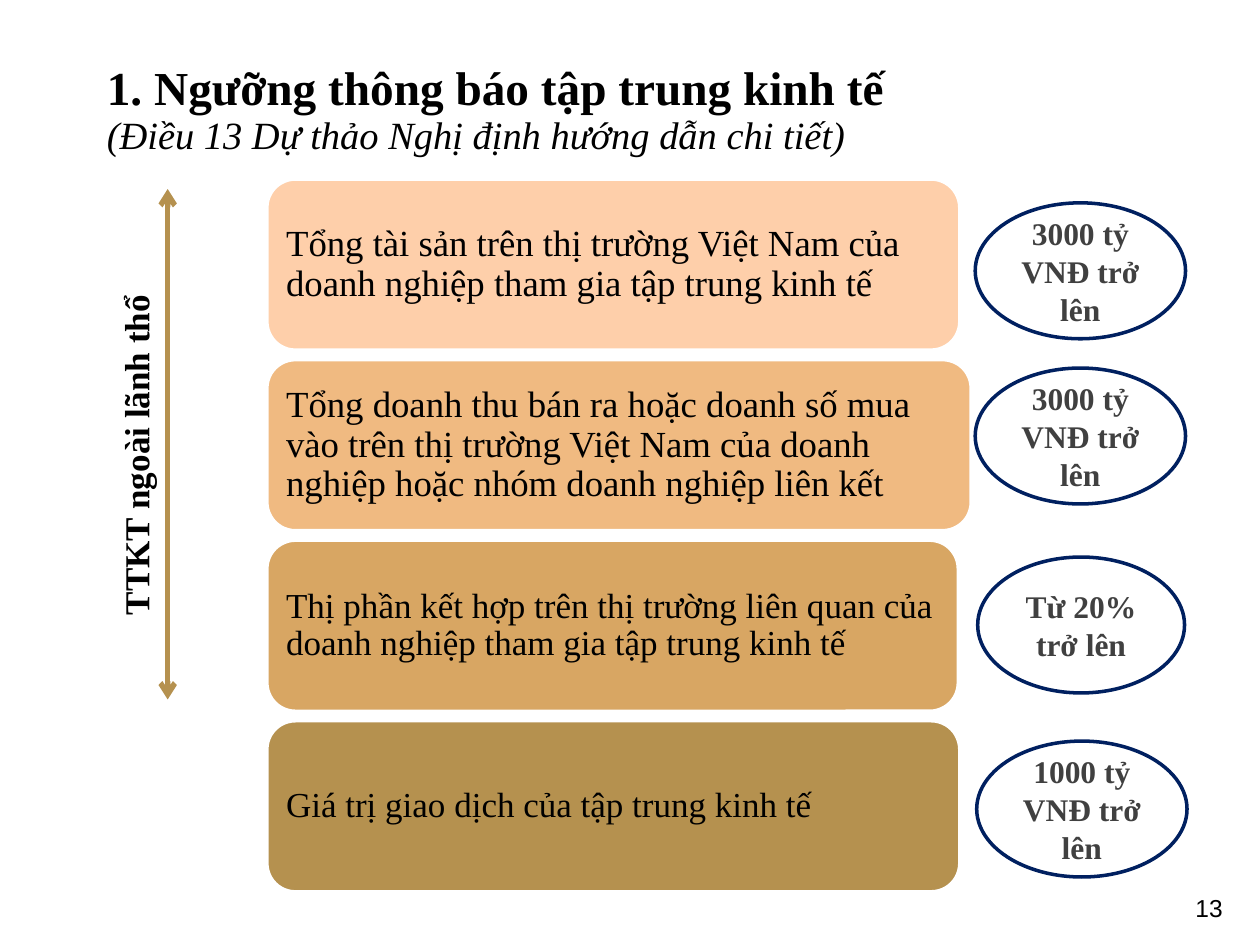
from dataclasses import dataclass

from lxml import etree
from pptx import Presentation
from pptx.dml.color import RGBColor
from pptx.enum.shapes import MSO_CONNECTOR, MSO_SHAPE
from pptx.enum.text import MSO_ANCHOR, MSO_AUTO_SIZE, PP_ALIGN
from pptx.oxml.ns import qn
from pptx.util import Cm, Pt

LEFT, CENTER, RIGHT = PP_ALIGN.LEFT, PP_ALIGN.CENTER, PP_ALIGN.RIGHT
TOP, MIDDLE = MSO_ANCHOR.TOP, MSO_ANCHOR.MIDDLE
ROUNDED, OVAL = MSO_SHAPE.ROUNDED_RECTANGLE, MSO_SHAPE.OVAL
TITLE_ONLY = 5


@dataclass(frozen=True)
class Theme:
    font: str = "Times New Roman"
    number_font: str = "Arial"
    text: str = "000000"
    badge_text: str = "404040"
    badge_line: str = "002060"
    card_line: str = "FFFFFF"
    arrow: str = "B5914F"
    title_size: float = 27
    subtitle_size: float = 22
    label_size: float = 20
    badge_size: float = 18
    number_size: float = 14


THEME = Theme()

# Card text, text size, fill, card width; threshold, its left, top and width (cm)
CRITERIA = [
    ("Tổng tài sản trên thị trường Việt Nam của doanh nghiệp tham gia tập trung kinh tế",
     21, "FECFAA", 13.97, "3000 tỷ VNĐ trở lên", 19.66, 4.09, 4.24),
    ("Tổng doanh thu bán ra hoặc doanh số mua vào trên thị trường Việt Nam của doanh nghiệp "
     "hoặc nhóm doanh nghiệp liên kết",
     21, "F0BA81", 14.2, "3000 tỷ VNĐ trở lên", 19.66, 7.42, 4.24),
    ("Thị phần kết hợp trên thị trường liên quan của doanh nghiệp tham gia tập trung kinh tế",
     20, "D8A663", 13.94, "Từ 20% trở lên", 19.71, 11.23, 4.17),
    ("Giá trị giao dịch của tập trung kinh tế",
     20, "B5914F", 13.97, "1000 tỷ VNĐ trở lên", 19.69, 14.94, 4.24),
]
CARD_HEIGHT, CARD_PITCH, BADGE_HEIGHT = 3.45, 3.64, 2.74


def rgb(value):
    return RGBColor.from_string(value)


def box_cm(left, top, width, height):
    return Cm(left), Cm(top), Cm(width), Cm(height)


def add_run(paragraph, text, size, font=THEME.font, color=THEME.text, bold=False, italic=False):
    run = paragraph.add_run()
    run.text = text
    run.font.name, run.font.size = font, Pt(size)
    run.font.bold, run.font.italic = bold, italic
    run.font.color.rgb = rgb(color)


def write_text(shape, text, align=LEFT, anchor=MIDDLE, spacing=1.0, **run_format):
    frame = shape.text_frame
    frame.word_wrap = True
    frame.auto_size = MSO_AUTO_SIZE.NONE
    frame.vertical_anchor = anchor
    paragraph = frame.paragraphs[0]
    paragraph.alignment = align
    paragraph.line_spacing = spacing
    add_run(paragraph, text, **run_format)
    return paragraph


def add_outlined_shape(slide, kind, box, line, fill=None):
    shape = slide.shapes.add_shape(kind, *box_cm(*box))
    shape.shadow.inherit = False
    if fill:
        shape.fill.solid()
        shape.fill.fore_color.rgb = rgb(fill)
    else:
        shape.fill.background()
    shape.line.color.rgb = rgb(line)
    shape.line.width = Pt(2)
    return shape


def place_title(slide, box):
    title = slide.shapes.title
    title.left, title.top, title.width, title.height = box_cm(*box)
    paragraph = write_text(title, "1. Ngưỡng thông báo tập trung kinh tế", spacing=0.9,
                           size=THEME.title_size, bold=True)
    paragraph.add_line_break()
    add_run(paragraph, "(Điều 13 Dự thảo Nghị định hướng dẫn chi tiết)",
            size=THEME.subtitle_size, italic=True)


def add_scope(slide, box):
    """Vertical label with a double-headed arrow at its right."""
    left, top, width, height = box
    label = slide.shapes.add_textbox(*box_cm(left, top, 1.37, 9.45))
    write_text(label, "TTKT ngoài lãnh thổ", anchor=TOP, size=THEME.label_size, bold=True)
    label.text_frame._txBody.bodyPr.set("vert", "vert270")

    x = Cm(left + width)
    arrow = slide.shapes.add_connector(MSO_CONNECTOR.STRAIGHT, x, Cm(top + 0.61),
                                       x, Cm(top + height))
    arrow.line.color.rgb = rgb(THEME.arrow)
    arrow.line.width = Pt(3)
    line = arrow.line._get_or_add_ln()
    for end in ("a:headEnd", "a:tailEnd"):
        etree.SubElement(line, qn(end), type="arrow")
    etree.SubElement(arrow._element.spPr, qn("a:effectLst"))


def add_card(slide, box, text, size, fill):
    card = add_outlined_shape(slide, ROUNDED, box, THEME.card_line, fill)
    frame = card.text_frame
    frame.margin_left = frame.margin_right = Cm(0.22)
    frame.margin_top = frame.margin_bottom = Cm(0.1)
    write_text(card, text, spacing=0.9, size=size)


def add_badge(slide, box, text):
    badge = add_outlined_shape(slide, OVAL, box, THEME.badge_line)
    write_text(badge, text, align=CENTER, size=THEME.badge_size,
               color=THEME.badge_text, bold=True)


def add_criteria(slide, left, top):
    for row, (text, size, fill, width, threshold, badge_left, badge_top,
              badge_width) in enumerate(CRITERIA):
        add_card(slide, (left, top + row * CARD_PITCH, width, CARD_HEIGHT), text, size, fill)
        add_badge(slide, (badge_left, badge_top, badge_width, BADGE_HEIGHT), threshold)


def add_page_number(slide, box, number):
    text_box = slide.shapes.add_textbox(*box_cm(*box))
    write_text(text_box, number, align=RIGHT, anchor=TOP,
               size=THEME.number_size, font=THEME.number_font)


def main():
    presentation = Presentation()
    presentation.slide_width, presentation.slide_height = Cm(25.4), Cm(19.05)
    slide = presentation.slides.add_slide(presentation.slide_layouts[TITLE_ONLY])
    place_title(slide, (1.9, 1.07, 21.8, 2.34))
    add_scope(slide, (2.18, 3.2, 1.2, 10.9))
    add_criteria(slide, 5.38, 3.61)
    add_page_number(slide, (23.5, 17.88, 1.4, 0.84), "13")
    presentation.save("out.pptx")


if __name__ == "__main__":
    main()
